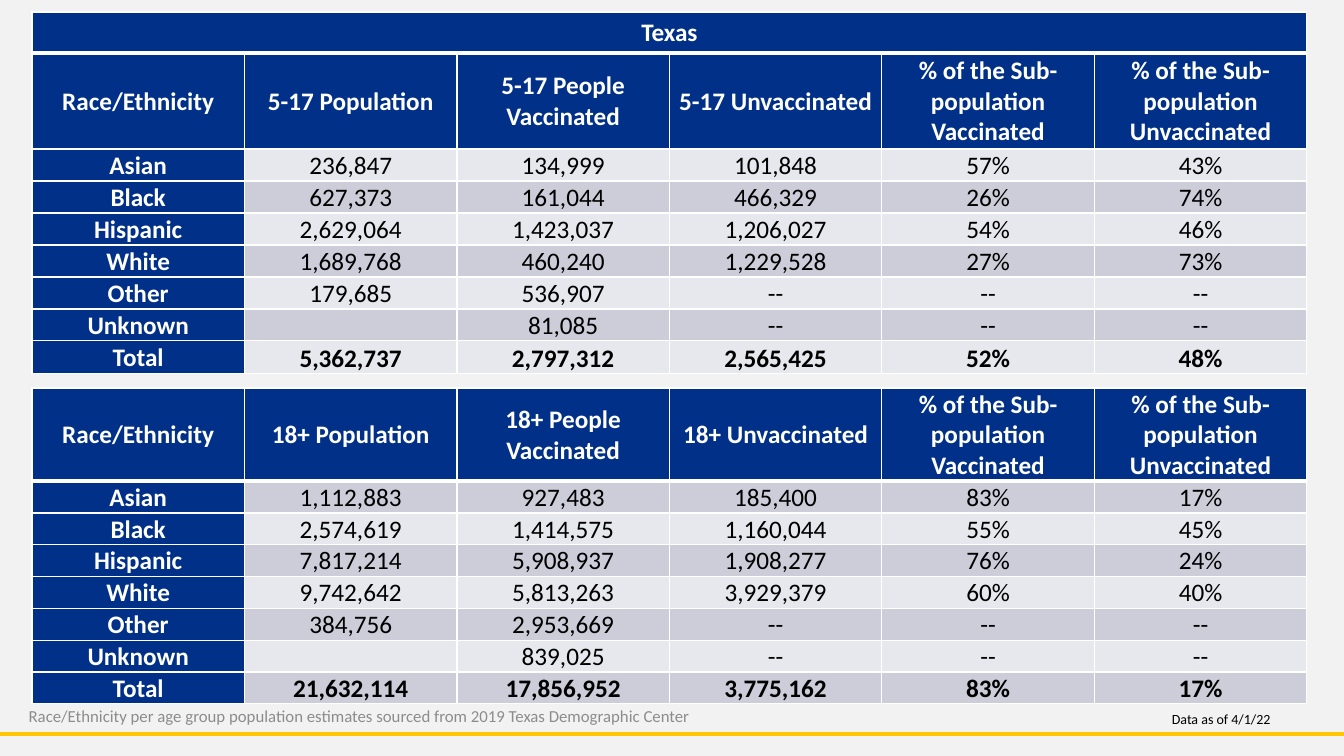
from dataclasses import dataclass

from lxml import etree
from pptx import Presentation
from pptx.dml.color import RGBColor
from pptx.enum.shapes import MSO_CONNECTOR
from pptx.enum.text import MSO_ANCHOR, MSO_AUTO_SIZE, PP_ALIGN
from pptx.oxml.ns import qn
from pptx.util import Emu, Pt

STRAIGHT = MSO_CONNECTOR.STRAIGHT
TOP, MIDDLE, BOTTOM = MSO_ANCHOR.TOP, MSO_ANCHOR.MIDDLE, MSO_ANCHOR.BOTTOM
LEFT, CENTER = PP_ALIGN.LEFT, PP_ALIGN.CENTER
GROW, FIXED = MSO_AUTO_SIZE.SHAPE_TO_FIT_TEXT, MSO_AUTO_SIZE.NONE

EMU_PER_PX = 914400 / 100.8
SLIDE_W, SLIDE_H = 1344, 756
TABLE_LEFT, TABLE_W = 32, 1275
FONT = "Calibri"
NAVY, WHITE, BLACK, GREY, GOLD = "003087", "FFFFFF", "000000", "8C8C8C", "FFC600"
LIGHT_BAND, DARK_BAND, BACKGROUND = "E7E8ED", "CCCDD9", "F2F2F2"
THIN, THICK = 1, 3
GROUPS = ["Asian", "Black", "Hispanic", "White", "Other", "Unknown", "Total"]


@dataclass
class AgeTable:
    title: str
    age: str
    top: int
    height: int
    row_heights: list[int]
    bands: tuple[str, str]
    figures: list[list[str]]


@dataclass
class Note:
    text: str
    box: tuple[int, int, int, int]
    size: int
    color: str
    align: PP_ALIGN
    anchor: MSO_ANCHOR
    fit: MSO_AUTO_SIZE


AGE_TABLES = [
    AgeTable("Texas", "5-17", 12, 365, [41, 96] + [32] * 6 + [33], (LIGHT_BAND, DARK_BAND), [
        ["236,847", "134,999", "101,848", "57%", "43%"],
        ["627,373", "161,044", "466,329", "26%", "74%"],
        ["2,629,064", "1,423,037", "1,206,027", "54%", "46%"],
        ["1,689,768", "460,240", "1,229,528", "27%", "73%"],
        ["179,685", "536,907", "--", "--", "--"],
        ["", "81,085", "--", "--", "--"],
        ["5,362,737", "2,797,312", "2,565,425", "52%", "48%"],
    ]),
    AgeTable("", "18+", 388, 310, [88] + [29] * 6 + [31], (DARK_BAND, LIGHT_BAND), [
        ["1,112,883", "927,483", "185,400", "83%", "17%"],
        ["2,574,619", "1,414,575", "1,160,044", "55%", "45%"],
        ["7,817,214", "5,908,937", "1,908,277", "76%", "24%"],
        ["9,742,642", "5,813,263", "3,929,379", "60%", "40%"],
        ["384,756", "2,953,669", "--", "--", "--"],
        ["", "839,025", "--", "--", "--"],
        ["21,632,114", "17,856,952", "3,775,162", "83%", "17%"],
    ]),
]
SOURCE_NOTE = Note(
    "Race/Ethnicity per age group population estimates sourced from 2019 Texas Demographic Center",
    (-34, 696, 787, 40), 12, GREY, CENTER, MIDDLE, FIXED)
DATE_NOTE = Note("Data as of 4/1/22", (1162, 706, 182, 27), 10, BLACK, LEFT, TOP, GROW)


def px(length: int) -> Emu:
    return Emu(round(length * EMU_PER_PX))


def rgb(color: str) -> RGBColor:
    return RGBColor.from_string(color)


def add_text(paragraph, text: str, size: int, color: str, bold: bool, align: PP_ALIGN) -> None:
    paragraph.alignment = align
    if text:
        run = paragraph.add_run()
        run.text = text
        run.font.name = FONT
        run.font.size = Pt(size)
        run.font.bold = bold
        run.font.color.rgb = rgb(color)


def add_borders(cell, top: int, bottom: int) -> None:
    properties = cell._tc.get_or_add_tcPr()
    for side, width in (("L", THIN), ("R", THIN), ("T", top), ("B", bottom)):
        border = etree.SubElement(properties, qn(f"a:ln{side}"), w=str(Pt(width)))
        fill = etree.SubElement(border, qn("a:solidFill"))
        etree.SubElement(fill, qn("a:srgbClr"), val=WHITE)


def style_cell(cell, text: str, fill: str, bold: bool, inset: int,
               top: int, bottom: int) -> None:
    is_label = fill == NAVY
    add_borders(cell, top, bottom)
    cell.fill.solid()
    cell.fill.fore_color.rgb = rgb(fill)
    cell.vertical_anchor = MIDDLE if is_label else BOTTOM
    cell.margin_left = cell.margin_right = cell.margin_top = px(inset)
    cell.margin_bottom = 0
    add_text(cell.text_frame.paragraphs[0], text, 18, WHITE if is_label else BLACK, bold, CENTER)


def add_age_table(slide, spec_: AgeTable) -> None:
    headings = ["Race/Ethnicity", f"{spec_.age} Population", f"{spec_.age} People Vaccinated",
                f"{spec_.age} Unvaccinated", "% of the Sub-population Vaccinated",
                "% of the Sub-population Unvaccinated"]
    columns = len(headings)
    title_rows = [[spec_.title] + [""] * (columns - 1)] if spec_.title else []
    body = [[group, *figures] for group, figures in zip(GROUPS, spec_.figures)]
    rows = title_rows + [headings] + body
    first_body_row = len(title_rows) + 1

    table = slide.shapes.add_table(len(rows), columns, px(TABLE_LEFT), px(spec_.top),
                                   px(TABLE_W), px(spec_.height)).table
    table.first_row = table.horz_banding = False
    for column in table.columns:
        column.width = Emu(px(TABLE_W) // columns)
    for row, height in zip(table.rows, spec_.row_heights):
        row.height = px(height)
    if title_rows:
        table.cell(0, 0).merge(table.cell(0, columns - 1))

    for r, texts in enumerate(rows):
        band = spec_.bands[(r - first_body_row) % 2]
        for c, text in enumerate(texts):
            is_label = r < first_body_row or c == 0
            style_cell(table.cell(r, c), text, NAVY if is_label else band,
                       bold=is_label or texts[0] == "Total",
                       inset=1 if is_label or c == 1 else 0,
                       top=THICK if r == 1 else THIN,
                       bottom=THICK if r == 0 else THIN)


def add_note(slide, note: Note) -> None:
    frame = slide.shapes.add_textbox(*map(px, note.box)).text_frame
    frame.word_wrap = True
    frame.auto_size = note.fit
    frame.vertical_anchor = note.anchor
    add_text(frame.paragraphs[0], note.text, note.size, note.color, False, note.align)


def add_footer_rule(slide) -> None:
    rule = slide.shapes.add_connector(STRAIGHT, 0, px(734), px(SLIDE_W), px(734))
    rule.line.color.rgb = rgb(GOLD)
    rule.line.width = Pt(3)
    etree.SubElement(rule._element.spPr, qn("a:effectLst"))


def main() -> None:
    presentation = Presentation()
    presentation.slide_width, presentation.slide_height = px(SLIDE_W), px(SLIDE_H)
    slide = presentation.slides.add_slide(presentation.slide_layouts[6])
    slide.background.fill.solid()
    slide.background.fill.fore_color.rgb = rgb(BACKGROUND)

    # Footer rule and source
    add_footer_rule(slide)
    add_note(slide, SOURCE_NOTE)

    # Vaccination tables by age group
    for age_table in AGE_TABLES:
        add_age_table(slide, age_table)

    # Date of the data
    add_note(slide, DATE_NOTE)
    presentation.save("out.pptx")


if __name__ == "__main__":
    main()
